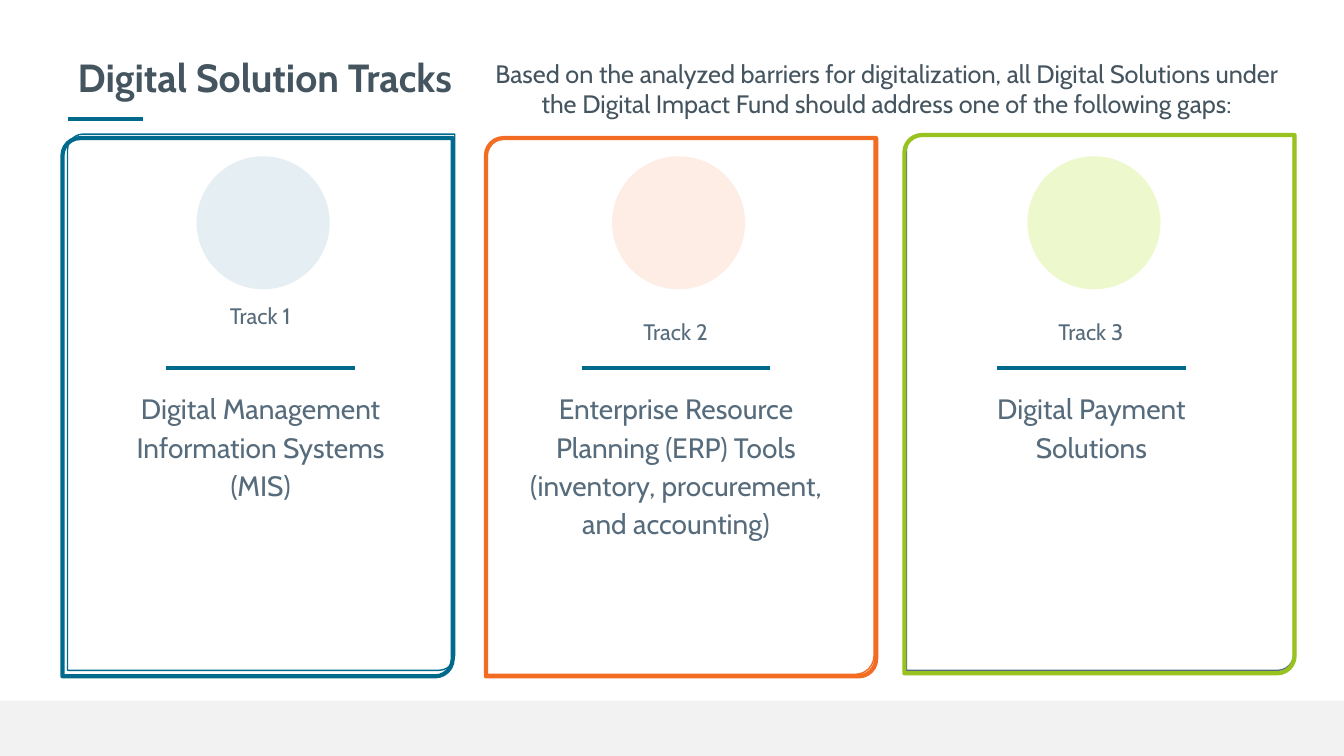
from lxml import etree
from pptx import Presentation
from pptx.dml.color import RGBColor
from pptx.enum.shapes import MSO_CONNECTOR, MSO_SHAPE
from pptx.enum.text import MSO_ANCHOR, MSO_AUTO_SIZE, PP_ALIGN
from pptx.oxml.ns import qn
from pptx.util import Inches, Pt

RECT, OVAL = MSO_SHAPE.RECTANGLE, MSO_SHAPE.OVAL
CARD = MSO_SHAPE.ROUND_2_DIAG_RECTANGLE
STRAIGHT = MSO_CONNECTOR.STRAIGHT
TOP, MIDDLE = MSO_ANCHOR.TOP, MSO_ANCHOR.MIDDLE
LEFT, CENTER = PP_ALIGN.LEFT, PP_ALIGN.CENTER
NO_FIT = MSO_AUTO_SIZE.NONE

WHITE = RGBColor(0xFF, 0xFF, 0xFF)
FOOTER_GRAY = RGBColor(0xF2, 0xF2, 0xF2)
TEAL = RGBColor(0x00, 0x6A, 0x8C)
ORANGE = RGBColor(0xF3, 0x6C, 0x23)
GREEN = RGBColor(0x98, 0xC2, 0x1D)
PALE_GREEN = RGBColor(0xED, 0xF8, 0xCD)
SLATE = RGBColor(0x56, 0x6B, 0x7B)
DARK_SLATE = RGBColor(0x45, 0x55, 0x60)

prs = Presentation()
prs.slide_width, prs.slide_height = Inches(13.33), Inches(7.5)
s = prs.slides.add_slide(prs.slide_layouts.get_by_name("Comparison"))


def add_shape(kind, box, fill=None, opacity=100, line=None, width=1, corner=None):
    sp = s.shapes.add_shape(kind, *[Inches(v) for v in box])
    sp.shadow.inherit = False
    if fill is None:
        sp.fill.background()
    else:
        sp.fill.solid()
        sp.fill.fore_color.rgb = fill
        if opacity < 100:
            clr = sp.fill._xPr.find(".//" + qn("a:srgbClr"))
            etree.SubElement(clr, qn("a:alpha"), val=str(opacity * 1000))
    if line is None:
        sp.line.fill.background()
    else:
        sp.line.color.rgb = line
        sp.line.width = Pt(width)
    if corner is not None:
        sp.adjustments[0] = corner
        sp.adjustments[1] = 0


def set_text(sp, box, text, size, color, align=CENTER, anchor=MIDDLE,
             spacing=1.0, bold=False):
    sp.left, sp.top, sp.width, sp.height = [Inches(v) for v in box]
    s.shapes._spTree.append(sp._element)  # bring to front
    tf = sp.text_frame
    tf.word_wrap = True
    tf.auto_size = NO_FIT
    tf.vertical_anchor = anchor
    tf.text = text
    p = tf.paragraphs[0]
    p.alignment = align
    p.line_spacing = spacing
    p.space_before = Pt(0)
    pPr = p._p.get_or_add_pPr()
    pPr.set("marL", "0")
    pPr.set("indent", "0")
    etree.SubElement(pPr, qn("a:buNone"))
    for r in p.runs:
        r.font.name = "Cabin"
        r.font.size = Pt(size)
        r.font.bold = bold
        r.font.color.rgb = color


# Footer band
add_shape(RECT, (0, 6.95, 13.33, 0.55), FOOTER_GRAY)

# Tracks: name, description, label top, circle left, circle colour and opacity,
# panel (left, top, line, corner), frame (left, top, line)
tracks = [
    ("Track 1", "Digital Management Information Systems (MIS)", 2.88,
     1.95, TEAL, 10, (0.67, 1.33, TEAL, 0.041), (0.62, 1.37, TEAL)),
    ("Track 2", "Enterprise Resource Planning (ERP) Tools\v"
     "(inventory, procurement, and accounting)", 3.04,
     6.07, ORANGE, 12, (4.83, 1.37, ORANGE, 0.049), (4.82, 1.37, ORANGE)),
    ("Track 3", "Digital Payment Solutions", 3.04,
     10.19, PALE_GREEN, 100, (8.99, 1.33, SLATE, 0.041), (8.97, 1.34, GREEN)),
]
rules = [(0.67, 1.18, 0.75)]
bodies = [ph for ph in s.placeholders if ph.placeholder_format.idx > 0]
for i, (name, gap, label_top, circle_x, tint, opacity, panel, frame) in enumerate(tracks):
    x, y, color, corner = panel
    add_shape(CARD, (x, y, 3.84, 5.32), WHITE, 50, color, 1, corner)
    add_shape(OVAL, (circle_x, 1.55, 1.32, 1.32), tint, opacity)
    x, y, color = frame
    add_shape(CARD, (x, y, 3.87, 5.34), line=color, width=3, corner=0.045)

    label = s.shapes.add_textbox(0, 0, 0, 0)
    set_text(label, (0.82 + 4.12 * i, label_top, 3.52, 0.46), name, 16, SLATE,
             spacing=1.14)
    set_text(bodies[i], (1.01 + 4.12 * i, 3.79, 3.15, 2.61), gap, 20, SLATE,
             anchor=TOP, spacing=1.14)
    rules.append((1.65 + 4.12 * i, 3.65, 1.87))

# Accent rules under the title and the track names
for x, y, length in rules:
    rule = s.shapes.add_connector(STRAIGHT, Inches(x), Inches(y),
                                  Inches(x + length), Inches(y))
    rule.line.color.rgb = TEAL
    rule.line.width = Pt(3)
    etree.SubElement(rule._element.spPr, qn("a:effectLst"))

# Title and introduction
set_text(s.shapes.title, (0.67, 0.52, 12.66, 0.54), "Digital Solution Tracks",
         28, DARK_SLATE, align=LEFT, spacing=0.9, bold=True)
set_text(bodies[3], (4.73, 0.38, 8.13, 0.99),
         "Based on the analyzed barriers for digitalization, all Digital Solutions "
         "under the Digital Impact Fund should address one of the following gaps:",
         18, DARK_SLATE)

prs.save("out.pptx")
